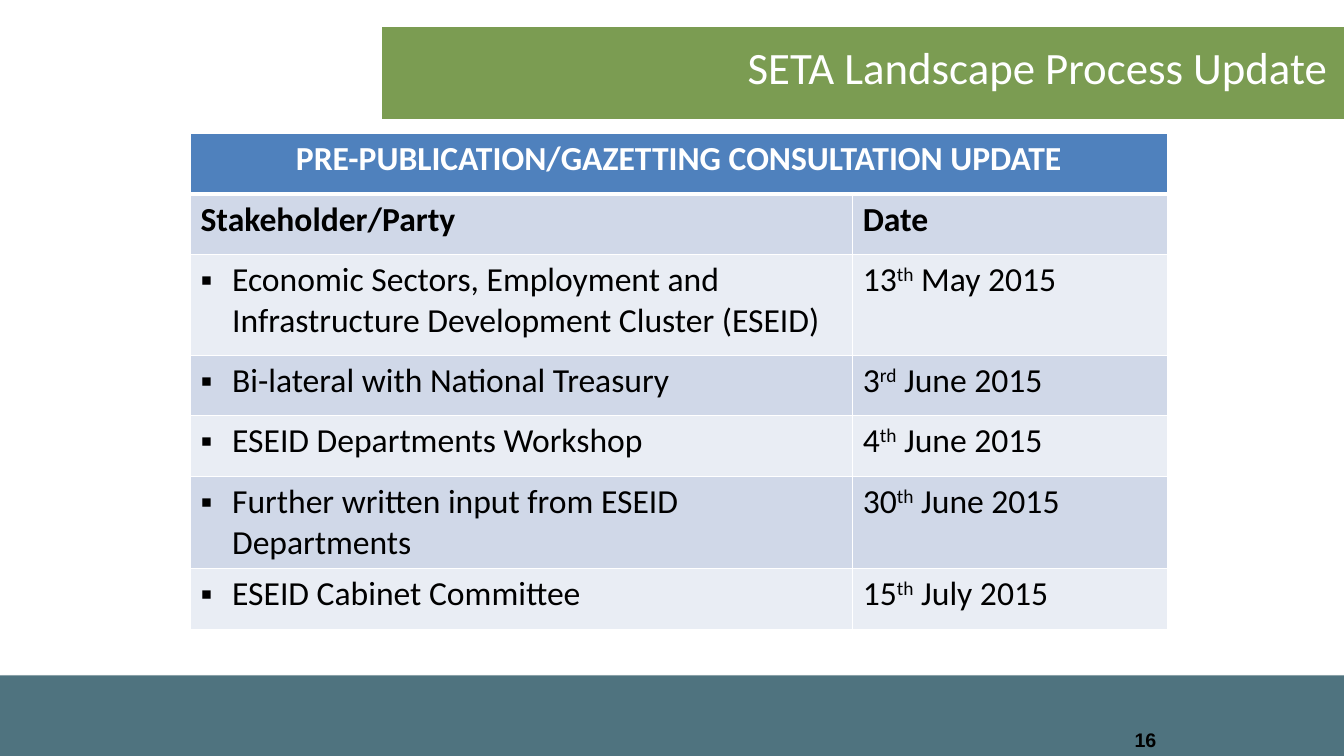
from typing import NamedTuple

from lxml.etree import SubElement as Sub
from pptx import Presentation
from pptx.dml.color import RGBColor as Rgb
from pptx.enum.shapes import MSO_SHAPE as Shape
from pptx.enum.text import MSO_ANCHOR as Anchor, PP_ALIGN as Align
from pptx.oxml.ns import qn
from pptx.util import Pt

HUES = {
    "white": "FFFFFF", "black": "000000", "teal": "4F737F", "green": "7B9C52",
    "head": "4F81BD", "dark": "D0D8E8", "light": "E9EDF4",
}


class Bar(NamedTuple):
    left: float
    top: float
    width: float
    height: float
    hue: str
    shade: bool


class Event(NamedTuple):
    party: str
    day: str
    suffix: str
    month: str
    height: float


BARS = [
    Bar(0, 482.4, 960, 57.6, "teal", True),
    Bar(272.9, 19.4, 687.1, 65.5, "green", False),
]
ROW = 43.2
EVENTS = [
    Event("Economic Sectors, Employment and Infrastructure Development "
          "Cluster (ESEID)", "13", "th", " May 2015", 72),
    Event("Bi-lateral with National Treasury", "3", "rd", " June 2015", ROW),
    Event("ESEID Departments Workshop", "4", "th", " June 2015", ROW),
    Event("Further written input from ESEID Departments",
          "30", "th", " June 2015", 66),
    Event("ESEID Cabinet Committee", "15", "th", " July 2015", ROW),
]
WIDTHS = [473, 224.6]


def tint(hue: str) -> Rgb:
    return Rgb.from_string(HUES[hue])


def style(para, size: float, hue: str, bold: bool = False,
          face: str = "Calibri") -> None:
    for run in para.runs:
        font = run.font
        font.name, font.size, font.bold = face, Pt(size), bold
        font.color.rgb = tint(hue)


def draw_bar(slide, bar: Bar) -> None:
    box = slide.shapes.add_shape(
        Shape.RECTANGLE, *(Pt(side) for side in bar[:4]))
    box.fill.solid()
    box.fill.fore_color.rgb = tint(bar.hue)
    box.line.fill.background()
    box.shadow.inherit = False
    if bar.shade:
        glow = Sub(box._element.spPr.find(qn("a:effectLst")),
                   qn("a:outerShdw"), blurRad=str(Pt(3.1)),
                   dist=str(Pt(1.8)), dir="5400000", rotWithShape="0")
        ink = Sub(glow, qn("a:srgbClr"), val=HUES["black"])
        Sub(ink, qn("a:alpha"), val="35000")


def paint(cell, hue: str, top: float = 1, base: float = 1) -> None:
    props = cell._tc.get_or_add_tcPr()
    for side, width in zip("LRTB", (1, 1, top, base)):
        line = Sub(props, qn(f"a:ln{side}"), w=str(Pt(width)))
        Sub(Sub(line, qn("a:solidFill")), qn("a:srgbClr"), val=HUES["white"])
    cell.fill.solid()
    cell.fill.fore_color.rgb = tint(hue)


def bullet(para) -> None:
    props = para._p.get_or_add_pPr()
    props.set("marL", str(Pt(22.5)))
    props.set("indent", str(Pt(-22.5)))
    Sub(props, qn("a:buFont"), typeface="Arial")
    Sub(props, qn("a:buChar"), char="▪")


def fill_row(cells, event: Event, hue: str) -> None:
    party, date = cells
    para = party.text_frame.paragraphs[0]
    para.text = event.party
    bullet(para)
    style(para, 24, "black")
    para = date.text_frame.paragraphs[0]
    for part in (event.day, event.suffix, event.month):
        para.add_run().text = part
    para.runs[1]._r.get_or_add_rPr().set("baseline", "30000")
    style(para, 24, "black")
    for cell in cells:
        paint(cell, hue)


def draw_table(slide) -> None:
    highs = [ROW, ROW] + [event.height for event in EVENTS]
    table = slide.shapes.add_table(
        len(highs), len(WIDTHS), Pt(136.1), Pt(95.4),
        Pt(sum(WIDTHS)), Pt(sum(highs))).table
    for col, width in zip(table.columns, WIDTHS):
        col.width = Pt(width)
    for row, high in zip(table.rows, highs):
        row.height = Pt(high)

    # Banner row across both columns
    banner = table.cell(0, 0)
    banner.merge(table.cell(0, 1))
    for cell in table.rows[0].cells:
        paint(cell, "head", base=3)
    para = banner.text_frame.paragraphs[0]
    para.text = "PRE-PUBLICATION/GAZETTING CONSULTATION UPDATE"
    para.alignment = Align.CENTER
    style(para, 24, "white", True)

    # Column names
    for cell, name in zip(table.rows[1].cells, ("Stakeholder/Party", "Date")):
        paint(cell, "dark", top=3)
        cell.text_frame.text = name
        style(cell.text_frame.paragraphs[0], 24, "black", True)

    # Consultation events
    for i, event in enumerate(EVENTS):
        cells = [table.cell(i + 2, col) for col in range(2)]
        fill_row(cells, event, "dark" if i % 2 else "light")


def draw_title(slide) -> None:
    title = slide.shapes.title
    title.left, title.top = Pt(524.9), Pt(24.5)
    title.width, title.height = Pt(432.7), Pt(46.1)
    frame = title.text_frame
    frame.text = "SETA Landscape Process Update"
    frame.word_wrap = False
    frame.vertical_anchor = Anchor.TOP
    para = frame.paragraphs[0]
    para.alignment = Align.CENTER
    style(para, 32, "white")
    slide.shapes._spTree.append(title._element)  # bring to front


def draw_number(slide) -> None:
    box = slide.shapes.add_textbox(Pt(665.3), Pt(514.1), Pt(167.8), Pt(28.8))
    frame = box.text_frame
    frame.text = "16"
    frame.word_wrap = True
    frame.vertical_anchor = Anchor.MIDDLE
    para = frame.paragraphs[0]
    para.alignment = Align.RIGHT
    style(para, 14, "black", True, "Arial")


def main() -> None:
    deck = Presentation()
    deck.slide_width, deck.slide_height = Pt(960), Pt(540)
    slide = deck.slides.add_slide(deck.slide_layouts[5])
    for bar in BARS:
        draw_bar(slide, bar)
    draw_number(slide)
    draw_table(slide)
    draw_title(slide)
    deck.save("out.pptx")


if __name__ == "__main__":
    main()
